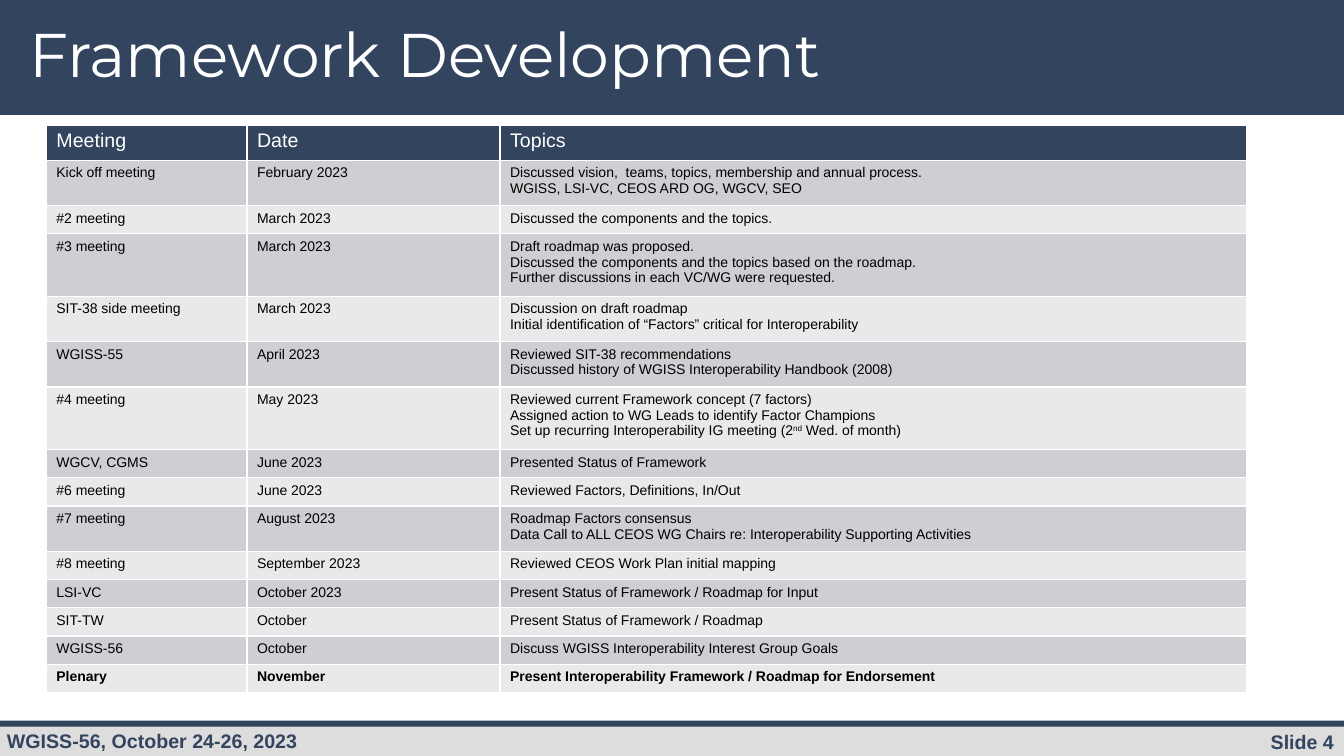
from lxml import etree
from pptx import Presentation
from pptx.dml.color import RGBColor
from pptx.enum.shapes import MSO_SHAPE
from pptx.enum.text import MSO_ANCHOR, PP_ALIGN
from pptx.oxml.ns import qn
from pptx.util import Inches, Pt

RECT = MSO_SHAPE.RECTANGLE
TOP = MSO_ANCHOR.TOP
LEFT, RIGHT = PP_ALIGN.LEFT, PP_ALIGN.RIGHT

NAVY = RGBColor(0x33, 0x44, 0x5F)
PALE = RGBColor(0xDD, 0xDD, 0xDD)
DARK = RGBColor(0xCE, 0xCF, 0xD2)
LIGHT = RGBColor(0xE8, 0xE9, 0xEA)
WHITE = RGBColor(0xFF, 0xFF, 0xFF)
BLACK = RGBColor(0x00, 0x00, 0x00)

# Table content: a newline starts a paragraph, ^ marks encloses a superscript
HEAD = ("Meeting", "Date", "Topics")
ROWS = [
    ("Kick off meeting", "February 2023",
     "Discussed vision,  teams, topics, membership and annual process.\n"
     "WGISS, LSI-VC, CEOS ARD OG, WGCV, SEO"),
    ("#2 meeting", "March 2023", "Discussed the components and the topics."),
    ("#3 meeting", "March 2023",
     "Draft roadmap was proposed.\n"
     "Discussed the components and the topics based on the roadmap.\n"
     "Further discussions in each VC/WG were requested."),
    ("SIT-38 side meeting", "March 2023",
     "Discussion on draft roadmap\n"
     "Initial identification of “Factors” critical for Interoperability"),
    ("WGISS-55", "April 2023",
     "Reviewed SIT-38 recommendations\n"
     "Discussed history of WGISS Interoperability Handbook (2008)"),
    ("#4 meeting", "May 2023",
     "Reviewed current Framework concept (7 factors)\n"
     "Assigned action to WG Leads to identify Factor Champions\n"
     "Set up recurring Interoperability IG meeting (2^nd^ Wed. of month)"),
    ("WGCV, CGMS", "June 2023", "Presented Status of Framework"),
    ("#6 meeting", "June 2023", "Reviewed Factors, Definitions, In/Out"),
    ("#7 meeting", "August 2023",
     "Roadmap Factors consensus\n"
     "Data Call to ALL CEOS WG Chairs re: Interoperability Supporting Activities"),
    ("#8 meeting", "September 2023", "Reviewed CEOS Work Plan initial mapping"),
    ("LSI-VC", "October 2023", "Present Status of Framework / Roadmap for Input"),
    ("SIT-TW", "October", "Present Status of Framework / Roadmap"),
    ("WGISS-56", "October", "Discuss WGISS Interoperability Interest Group Goals"),
    ("Plenary", "November",
     "Present Interoperability Framework / Roadmap for Endorsement"),
]
COLS = (1.99, 2.51, 7.4)
HIGH = {1: 0.28, 2: 0.45, 3: 0.62}  # row height by number of text lines


def write(frame, text, size=10, color=BLACK, bold=False, font="Arial",
          align=LEFT, space=None):
    """Fill a text frame, one paragraph per line."""
    frame.word_wrap = True
    for i, line in enumerate(text.split("\n")):
        para = frame.add_paragraph() if i else frame.paragraphs[0]
        para.alignment = align
        if space:
            para.line_spacing = space
        for j, part in enumerate(line.split("^")):
            run = para.add_run()
            run.text = part
            run.font.name = font
            run.font.size = Pt(size)
            run.font.bold = bold
            run.font.color.rgb = color
            if j % 2:
                run.font._element.set("baseline", "30000")


def edge(cell):
    """Draw a thin white border on every side of a cell."""
    props = cell._tc.get_or_add_tcPr()
    for i, tag in enumerate(("a:lnL", "a:lnR", "a:lnT", "a:lnB")):
        line = etree.Element(qn(tag), w=str(Pt(1)))
        fill = etree.SubElement(line, qn("a:solidFill"))
        etree.SubElement(fill, qn("a:srgbClr"), val=str(WHITE))
        props.insert(i, line)


class Page:
    def __init__(self, deck):
        self.slide = deck.slides.add_slide(deck.slide_layouts[5])
        self.shapes = self.slide.shapes

    def bar(self, x, y, w, h, color):
        bar = self.shapes.add_shape(RECT, Inches(x), Inches(y), Inches(w), Inches(h))
        bar.shadow.inherit = False
        bar.fill.solid()
        bar.fill.fore_color.rgb = color
        bar.line.fill.background()

    def label(self, text, x, y, w, h, **style):
        box = self.shapes.add_textbox(Inches(x), Inches(y), Inches(w), Inches(h))
        write(box.text_frame, text, **style)

    def title(self, text, x, y, w, h, **style):
        box = self.shapes.title
        box.left, box.top = Inches(x), Inches(y)
        box.width, box.height = Inches(w), Inches(h)
        box.text_frame.vertical_anchor = TOP
        write(box.text_frame, text, **style)
        # Bring the title in front of the bars
        box.element.getparent().append(box.element)

    def cell(self, cell, text, fill, **style):
        cell.fill.solid()
        cell.fill.fore_color.rgb = fill
        write(cell.text_frame, text, **style)
        edge(cell)

    def table(self, x, y, head, rows):
        highs = [0.35] + [HIGH[row[-1].count("\n") + 1] for row in rows]
        grid = self.shapes.add_table(
            len(highs), len(COLS), Inches(x), Inches(y),
            Inches(sum(COLS)), Inches(sum(highs))).table
        for col, wide in zip(grid.columns, COLS):
            col.width = Inches(wide)
        for row, high in zip(grid.rows, highs):
            row.height = Inches(high)
        for c, text in enumerate(head):
            self.cell(grid.cell(0, c), text, NAVY, size=14, color=WHITE)
        for r, row in enumerate(rows, 1):
            for c, text in enumerate(row):
                self.cell(grid.cell(r, c), text, DARK if r % 2 else LIGHT,
                          bold=r == len(rows))


def main():
    deck = Presentation()
    deck.slide_width, deck.slide_height = Inches(13.33), Inches(7.5)
    page = Page(deck)

    # Header and footer bands
    page.bar(0, 0, 13.33, 1.14, NAVY)
    page.bar(0, 7.19, 13.33, 0.31, PALE)
    page.bar(0, 7.15, 13.33, 0.06, NAVY)

    # Footer text
    foot = {"size": 14, "color": NAVY, "bold": True}
    page.label("Slide 4", 11.23, 7.19, 2.1, 0.34, align=RIGHT, **foot)
    page.label("WGISS-56, October 24-26, 2023", -0.03, 7.18, 5.39, 0.34, **foot)

    # Title and meeting table
    page.title("Framework Development", 0.19, 0.19, 10.27, 0.85,
               size=44, color=WHITE, font="Montserrat", space=0.9)
    page.table(0.46, 1.24, HEAD, ROWS)

    deck.save("out.pptx")


if __name__ == "__main__":
    main()
